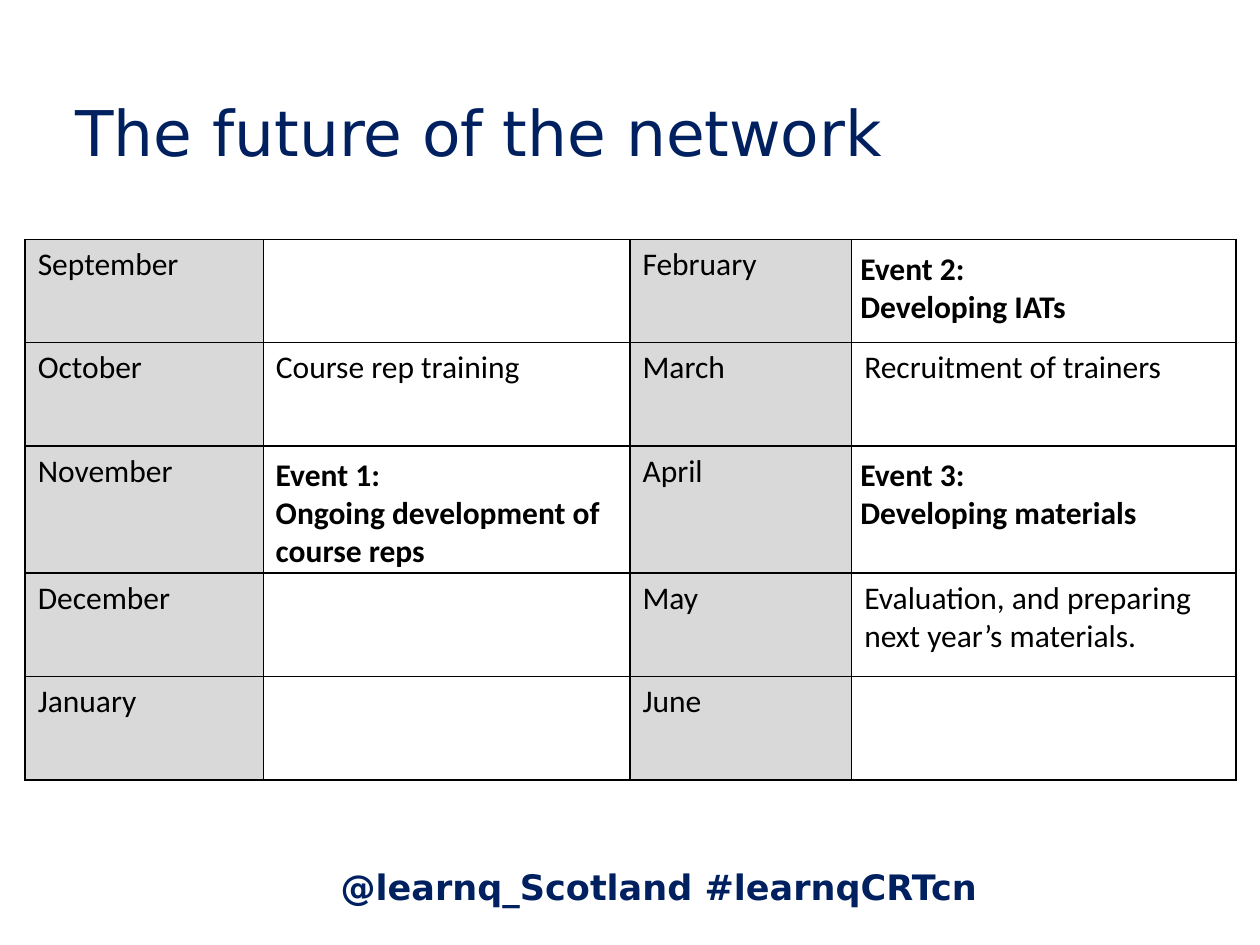
from pptx import Presentation
from pptx.dml.color import RGBColor
from pptx.enum.text import MSO_ANCHOR, MSO_AUTO_SIZE, PP_ALIGN
from pptx.oxml import parse_xml
from pptx.oxml.ns import nsdecls
from pptx.util import Inches, Pt

NAVY, BLACK, GREY = "002060", "000000", "D9D9D9"
COLUMNS, ROWS = 100, 75

TITLE = {"name": "DejaVu Sans", "size": Pt(36), "bold": False}
HANDLE = {"name": "DejaVu Sans", "size": Pt(20), "bold": True}
BODY = {"name": "Calibri", "size": Pt(18), "bold": False}
EVENT = {**BODY, "bold": True}

TABLE_LEFT, TABLE_TOP = 2, 19
MONTH_WIDTHS = [18.9, 29.1, 17.6, 30.5]
MONTH_HEIGHTS = [8.2, 8.2, 10.1, 8.2, 8.2]
CALENDAR = [
    ["September", "", "February", ""],
    ["October", "Course rep training", "March", "Recruitment of trainers"],
    ["November", "", "April", ""],
    ["December", "", "May", "Evaluation, and preparing next year’s materials."],
    ["January", "", "June", ""],
]
EVENTS = [
    (20.9, 2, 10.1, ["Event 1:", "Ongoing development of course reps"]),
    (67.3, 0, 7.1, ["Event 2:", "Developing IATs"]),
    (67.3, 2, 7.1, ["Event 3:", "Developing materials"]),
]


def colour(value):
    """Turn a hex string into a colour."""
    return RGBColor.from_string(value)


class SlideBuilder:
    """Hold the deck, its grid and the current slide."""

    def __init__(self):
        """Open a deck with one blank slide."""
        self.deck = Presentation()
        self.deck.slide_width, self.deck.slide_height = Inches(10), Inches(7.5)
        self.slide = self.deck.slides.add_slide(self.deck.slide_layouts[6])

    def across(self, columns):
        """Give the width of a number of grid columns."""
        return round(self.deck.slide_width * columns / COLUMNS)

    def down(self, rows):
        """Give the height of a number of grid rows."""
        return round(self.deck.slide_height * rows / ROWS)

    def place(self, left, top, width, height):
        """Convert a grid box to slide lengths."""
        return self.across(left), self.down(top), self.across(width), self.down(height)

    def fill_frame(self, frame, lines, style, ink, align=PP_ALIGN.LEFT):
        """Fill a text frame with styled paragraphs."""
        frame.word_wrap = True
        for index, line in enumerate(lines):
            paragraph = frame.paragraphs[0] if index == 0 else frame.add_paragraph()
            paragraph.alignment = align
            run = paragraph.add_run()
            run.text = line
            for key, value in style.items():
                setattr(run.font, key, value)
            run.font.color.rgb = colour(ink)

    def text(self, box, lines, style, ink, align=PP_ALIGN.LEFT,
             anchor=MSO_ANCHOR.TOP, fit=MSO_AUTO_SIZE.SHAPE_TO_FIT_TEXT):
        """Add a text box."""
        frame = self.slide.shapes.add_textbox(*self.place(*box)).text_frame
        self.fill_frame(frame, lines, style, ink, align)
        frame.auto_size, frame.vertical_anchor = fit, anchor

    def border(self, cell):
        """Draw a thin black line on each side of a cell."""
        for side in "LRTB":
            cell._tc.get_or_add_tcPr().append(parse_xml(
                f'<a:ln{side} {nsdecls("a")} w="{Pt(1)}"><a:solidFill>'
                f'<a:srgbClr val="{BLACK}"/></a:solidFill></a:ln{side}>'))

    def table(self, left, top, widths, heights, entries):
        """Add a bordered table with every other column shaded."""
        box = self.place(left, top, sum(widths), sum(heights))
        grid = self.slide.shapes.add_table(len(heights), len(widths), *box).table
        grid.first_row = grid.horz_banding = False
        for column, width in zip(grid.columns, widths):
            column.width = self.across(width)
        for row, height, texts in zip(grid.rows, heights, entries):
            row.height = self.down(height)
            for index, (cell, entry) in enumerate(zip(row.cells, texts)):
                self.border(cell)
                if index % 2:
                    cell.fill.background()
                else:
                    cell.fill.solid()
                    cell.fill.fore_color.rgb = colour(GREY)
                if entry:
                    self.fill_frame(cell.text_frame, [entry], BODY, BLACK)


def main():
    """Build the network calendar slide."""
    page = SlideBuilder()
    page.text((22.4, 68.2, 59.8, 4.4), ["@learnq_Scotland #learnqCRTcn"],
              HANDLE, NAVY, align=PP_ALIGN.CENTER)
    page.text((5, 3, 72.6, 14.8), ["The future of the network"], TITLE, NAVY,
              anchor=MSO_ANCHOR.MIDDLE, fit=MSO_AUTO_SIZE.NONE)
    page.table(TABLE_LEFT, TABLE_TOP, MONTH_WIDTHS, MONTH_HEIGHTS, CALENDAR)
    for left, month, height, lines in EVENTS:
        top = TABLE_TOP + sum(MONTH_HEIGHTS[:month]) + 0.25
        page.text((left, top, 28.3, height), lines, EVENT, BLACK)
    page.deck.save("out.pptx")


if __name__ == "__main__":
    main()
